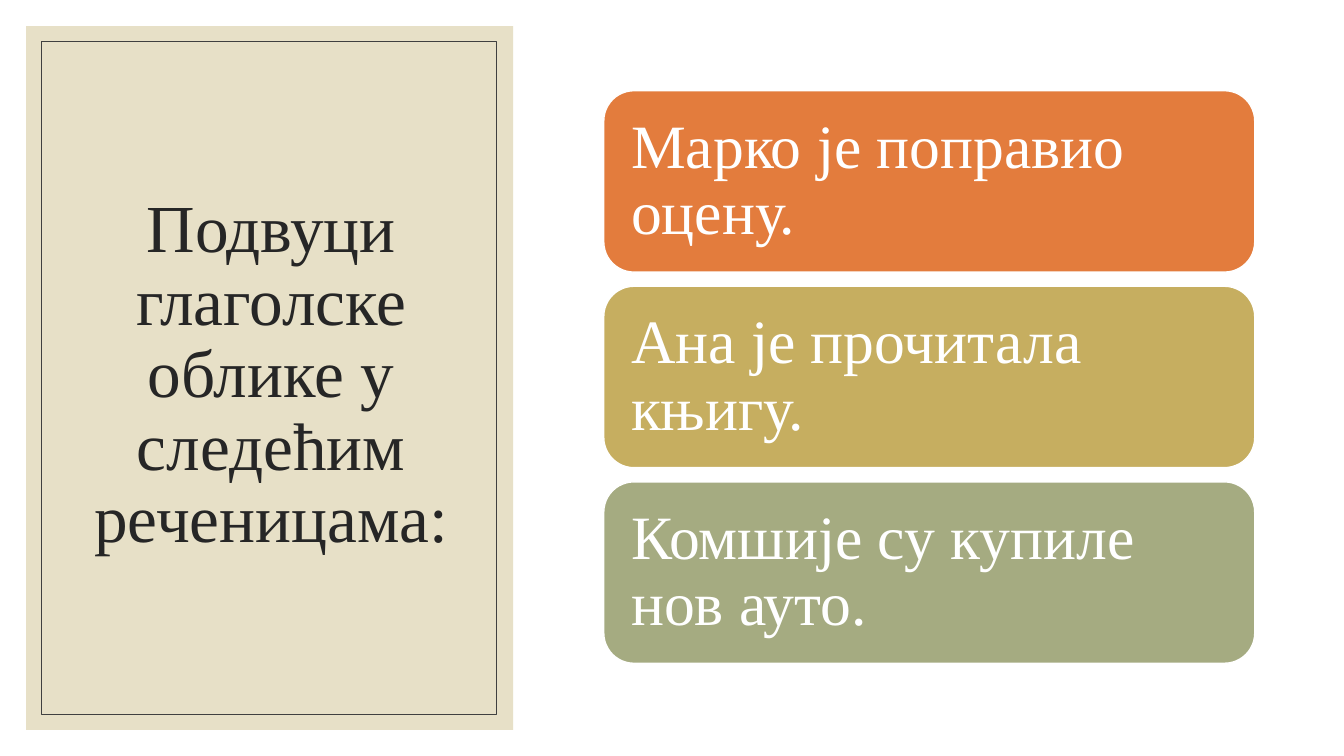
import pptx
import pptx.util
import pptx.dml.color
import pptx.enum.shapes
import pptx.enum.text

Pt = pptx.util.Pt
RGBColor = pptx.dml.color.RGBColor
MSO_SHAPE = pptx.enum.shapes.MSO_SHAPE
PP_ALIGN = pptx.enum.text.PP_ALIGN

WHITE = RGBColor(0xFF, 0xFF, 0xFF)
SAND = RGBColor(0xE7, 0xE0, 0xC7)
INK = RGBColor(0x26, 0x26, 0x26)
FRAME_GREY = RGBColor(0x40, 0x40, 0x40)
ORANGE = RGBColor(0xE3, 0x7C, 0x3D)
GOLD = RGBColor(0xC6, 0xAE, 0x60)
SAGE = RGBColor(0xA5, 0xAB, 0x81)

FONT = "Times New Roman"
SENTENCES = [
    ("Марко је поправио оцену.", ORANGE),
    ("Ана је прочитала књигу.", GOLD),
    ("Комшије су купиле нов ауто.", SAGE),
]
CARD_LEFT, CARD_TOP, CARD_WIDTH, CARD_HEIGHT = 431.3, 64.8, 465, 129.6
CARD_PITCH = 139.7


def add_box(s, kind, left, top, width, height, fill=None, line=None, weight=1):
    sp = s.shapes.add_shape(kind, Pt(left), Pt(top), Pt(width), Pt(height))
    sp.shadow.inherit = False
    if fill is None:
        sp.fill.background()
    else:
        sp.fill.solid()
        sp.fill.fore_color.rgb = fill
    if line is None:
        sp.line.fill.background()
    else:
        sp.line.color.rgb = line
        sp.line.width = Pt(weight)
    return sp


def write_text(sp, text, size, color, align, inset_x, inset_y):
    tf = sp.text_frame
    tf.word_wrap = True
    tf.auto_size = pptx.enum.text.MSO_AUTO_SIZE.NONE
    tf.vertical_anchor = pptx.enum.text.MSO_ANCHOR.MIDDLE
    tf.margin_left = tf.margin_right = Pt(inset_x)
    tf.margin_top = tf.margin_bottom = Pt(inset_y)
    p = tf.paragraphs[0]
    p.alignment = align
    p.line_spacing = 0.9
    p.space_before = Pt(0)
    r = p.add_run()
    r.text = text
    r.font.name = FONT
    r.font.size = Pt(size)
    r.font.color.rgb = color


def add_title_panel(s):
    panel = add_box(s, MSO_SHAPE.RECTANGLE, 18.7, 18.7, 347.8, 502.6, fill=SAND)
    title = s.shapes.title
    title.left, title.top, title.width, title.height = Pt(45.4), Pt(43.9), Pt(296.6), Pt(449.3)
    write_text(title, "Подвуци глаголске облике у следећим реченицама:",
               48, INK, PP_ALIGN.CENTER, 7.2, 3.6)
    # Keep the panel behind the title
    title.element.addprevious(panel.element)
    add_box(s, MSO_SHAPE.RECTANGLE, 29.5, 29.5, 324.7, 481, line=FRAME_GREY, weight=0.5)


def add_sentence_card(s, index, text, color):
    card = add_box(s, MSO_SHAPE.ROUNDED_RECTANGLE, CARD_LEFT, CARD_TOP + index * CARD_PITCH,
                   CARD_WIDTH, CARD_HEIGHT, fill=color, line=WHITE)
    write_text(card, text, 44, WHITE, PP_ALIGN.LEFT, 13.2, 13.2)


def main():
    prs = pptx.Presentation()
    prs.slide_width, prs.slide_height = Pt(960), Pt(540)
    s = prs.slides.add_slide(prs.slide_layouts[5])
    s.background.fill.solid()
    s.background.fill.fore_color.rgb = WHITE

    # Left panel with the task
    add_title_panel(s)

    # Sentences stacked on the right
    for index, (text, color) in enumerate(SENTENCES):
        add_sentence_card(s, index, text, color)

    prs.save("out.pptx")


if __name__ == "__main__":
    main()
